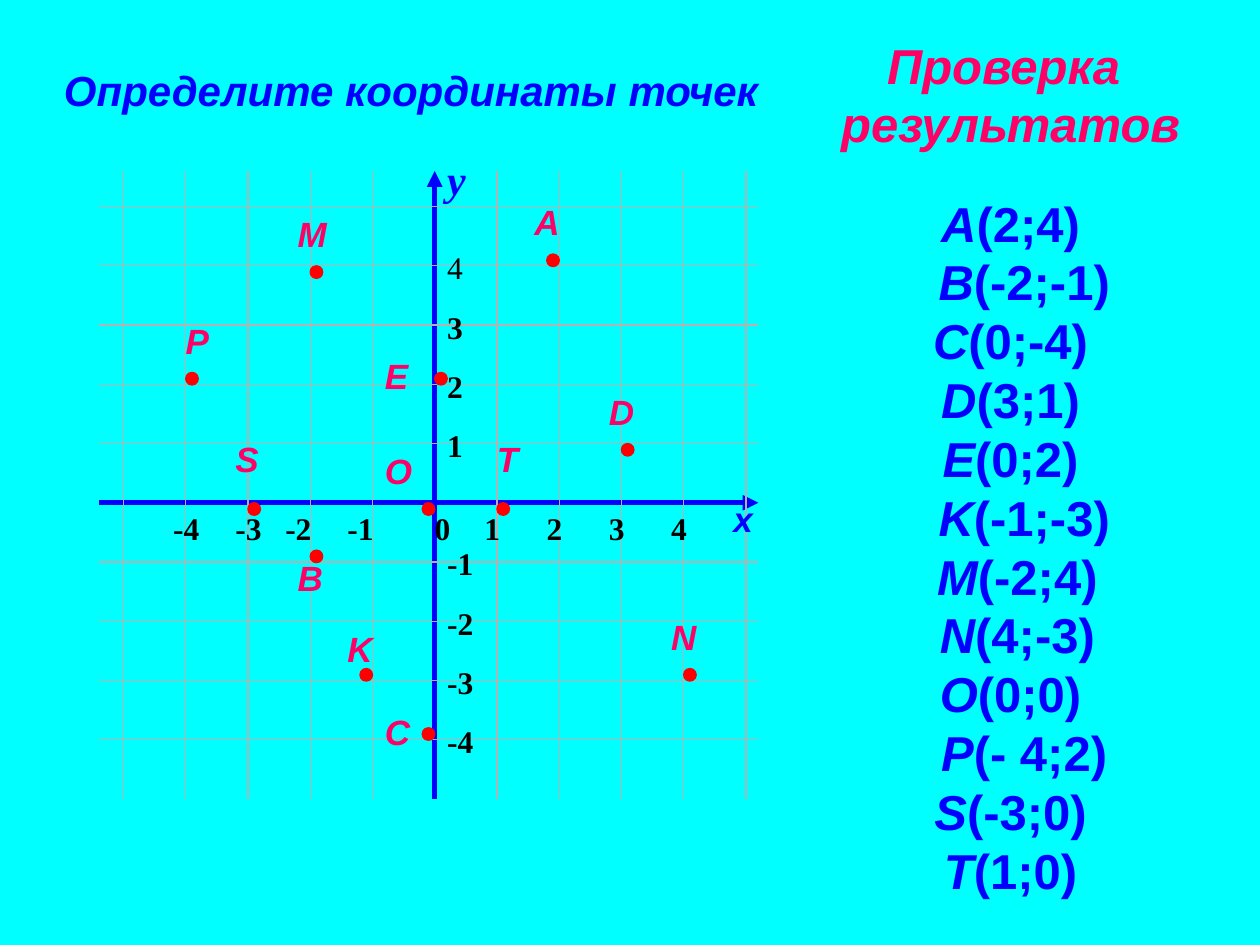
from dataclasses import dataclass

from lxml import etree
from pptx import Presentation
from pptx import util as u
from pptx.dml.color import RGBColor
from pptx.enum import shapes, text
from pptx.oxml.ns import qn


@dataclass(frozen=True)
class Theme:
    back: str = "00FFFF"
    blue: str = "0000FF"
    pink: str = "FF0066"
    red: str = "FF0000"
    grid: str = "B2B2B2"
    black: str = "000000"
    sans: str = "Arial"
    serif: str = "Times New Roman"
    answer: int = 28
    title: int = 24
    label: int = 20
    tick: int = 18


@dataclass(frozen=True)
class Plane:
    """Coordinate plane; columns and rows are fifths of a unit from the origin."""
    x0: float = 3.45
    y0: float = 3.99
    col: float = 0.0988
    row: float = 0.094
    left: int = -27
    right: int = 26
    top: int = -28
    bottom: int = 25

    def at(self, col: float, row: float) -> tuple[u.Length, u.Length]:
        return u.Inches(self.x0 + col * self.col), u.Inches(self.y0 + row * self.row)


@dataclass(frozen=True)
class Point:
    name: str
    answer: str
    dot: tuple[int, int]
    label: tuple[int, int]
    indent: int = 0  # answer indent, in widths of a space


T = Theme()
PLANE = Plane()
STEP = 5
SPACE = 0.278 * T.answer

POINTS = [
    Point("A", "(2;4)", (9, -21), (7, -26)),
    Point("B", "(-2;-1)", (-10, 4), (-12, 4), 2),
    Point("C", "(0;-4)", (-1, 19), (-5, 17)),
    Point("D", "(3;1)", (15, -5), (13, -10)),
    Point("E", "(0;2)", (0, -11), (-5, -13)),
    Point("K", "(-1;-3)", (-6, 14), (-8, 10), 2),
    Point("M", "(-2;4)", (-10, -20), (-12, -25), 1),
    Point("N", "(4;-3)", (20, 14), (18, 9), 1),
    Point("O", "(0;0)", (-1, 0), (-5, -5)),
    Point("P", "(- 4;2)", (-20, -11), (-21, -16), 2),
    Point("S", "(-3;0)", (-15, 0), (-17, -6)),
    Point("T", "(1;0)", (5, 0), (4, -6)),
]


def style(r, size: int, color: str, font: str = T.sans, bold: bool = True, italic: bool = True) -> None:
    r.font.size, r.font.name = u.Pt(size), font
    r.font.bold, r.font.italic = bold, italic
    r.font.color.rgb = RGBColor.from_string(color)


def add_line(s, start: tuple[int, int], end: tuple[int, int], color: str, width: float,
             arrow: bool = False) -> None:
    line = s.shapes.add_connector(shapes.MSO_CONNECTOR.STRAIGHT, *PLANE.at(*start), *PLANE.at(*end))
    line.line.color.rgb = RGBColor.from_string(color)
    line.line.width = u.Pt(width)
    if arrow:
        etree.SubElement(line.line._get_or_add_ln(), qn("a:tailEnd"), type="triangle")
    etree.SubElement(line._element.spPr, qn("a:effectLst"))


def add_label(s, words: str, place: tuple[int, int], size: int, color: str, **look) -> None:
    tf = s.shapes.add_textbox(*PLANE.at(*place), u.Inches(0.55), u.Inches(0.5)).text_frame
    tf.word_wrap = True
    tf.text = words
    style(tf.paragraphs[0].runs[0], size, color, **look)


def add_dot(s, place: tuple[int, int]) -> None:
    sp = s.shapes.add_shape(shapes.MSO_SHAPE.OVAL, *PLANE.at(*place), u.Inches(0.1), u.Inches(0.1))
    sp.shadow.inherit = False
    sp.fill.solid()
    sp.fill.fore_color.rgb = sp.line.color.rgb = RGBColor.from_string(T.red)
    sp.line.width = u.Pt(0.75)


def add_title(s) -> None:
    tf = s.shapes.add_textbox(u.Inches(0.41), u.Inches(0.46), u.Inches(5.73), u.Inches(0.5)).text_frame
    tf.word_wrap = False
    tf.auto_size = text.MSO_AUTO_SIZE.SHAPE_TO_FIT_TEXT
    tf.text = "Определите координаты точек"
    style(tf.paragraphs[0].runs[0], T.title, T.blue)


def add_answers(s) -> None:
    tf = s.shapes.add_textbox(u.Inches(6.56), u.Inches(0.23), u.Inches(2.92), u.Inches(7.03)).text_frame
    tf.word_wrap = False
    tf.auto_size = text.MSO_AUTO_SIZE.SHAPE_TO_FIT_TEXT
    tf.text = "Проверка \nрезультатов"
    for p in tf.paragraphs:
        style(p.runs[0], T.answer, T.pink)
    for point in POINTS:
        p = tf.add_paragraph()
        if point is POINTS[0]:
            p.space_before = u.Pt(23)
        if point.indent:
            p._p.get_or_add_pPr().set("marL", str(int(u.Pt(2 * SPACE * point.indent / 2))))
        for words, italic in ((point.name, True), (point.answer, False)):
            r = p.add_run()
            r.text = words
            style(r, T.answer, T.blue, italic=italic)
    for p in tf.paragraphs:
        p.alignment = text.PP_ALIGN.CENTER


def add_plane(s) -> None:
    add_line(s, (PLANE.left, 0), (PLANE.right, 0), T.blue, 3, arrow=True)
    add_line(s, (0, PLANE.bottom), (0, PLANE.top), T.blue, 3, arrow=True)
    for n in range(-5, 6):
        if n == 0:
            continue
        if n < 5:
            add_line(s, (PLANE.left, n * STEP), (PLANE.right, n * STEP), T.grid, 0.75)
        add_line(s, (n * STEP, PLANE.bottom), (n * STEP, PLANE.top), T.grid, 0.5 if n == -5 else 0.75)


def add_ticks(s) -> None:
    add_label(s, "0", (-1, 0), T.tick, T.black, font=T.serif, italic=False)
    for n in (-4, -3, -2, -1, 1, 2, 3, 4):
        col = n * STEP - (3 if n in (-1, -2) else 2)
        add_label(s, str(n), (col, 0), T.tick, T.black, font=T.serif, italic=False)
        add_label(s, str(n), (0, -n * STEP - 2), T.tick, T.black, font=T.serif, italic=False, bold=n != 4)


def main() -> None:
    prs = Presentation()
    prs.slide_width, prs.slide_height = u.Inches(10), u.Inches(7.5)
    s = prs.slides.add_slide(prs.slide_layouts[6])
    s.background.fill.solid()
    s.background.fill.fore_color.rgb = RGBColor.from_string(T.back)
    add_title(s)
    add_answers(s)
    add_plane(s)
    add_label(s, "y", (0, -30), T.title, T.blue, font=T.serif)
    add_ticks(s)
    for point in POINTS:
        add_dot(s, point.dot)
        add_label(s, point.name, point.label, T.label, T.pink)
    add_label(s, "x", (23, -1), T.label, T.blue)
    prs.save("out.pptx")


if __name__ == "__main__":
    main()
